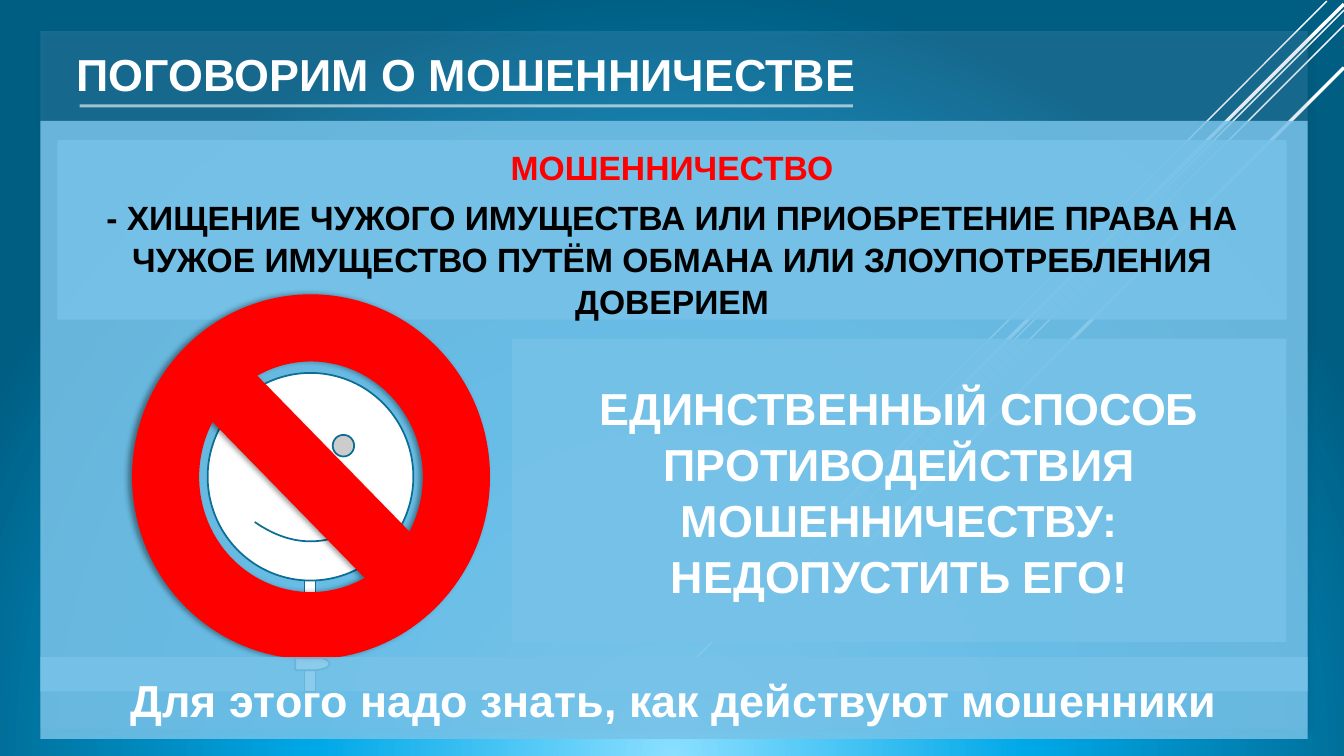
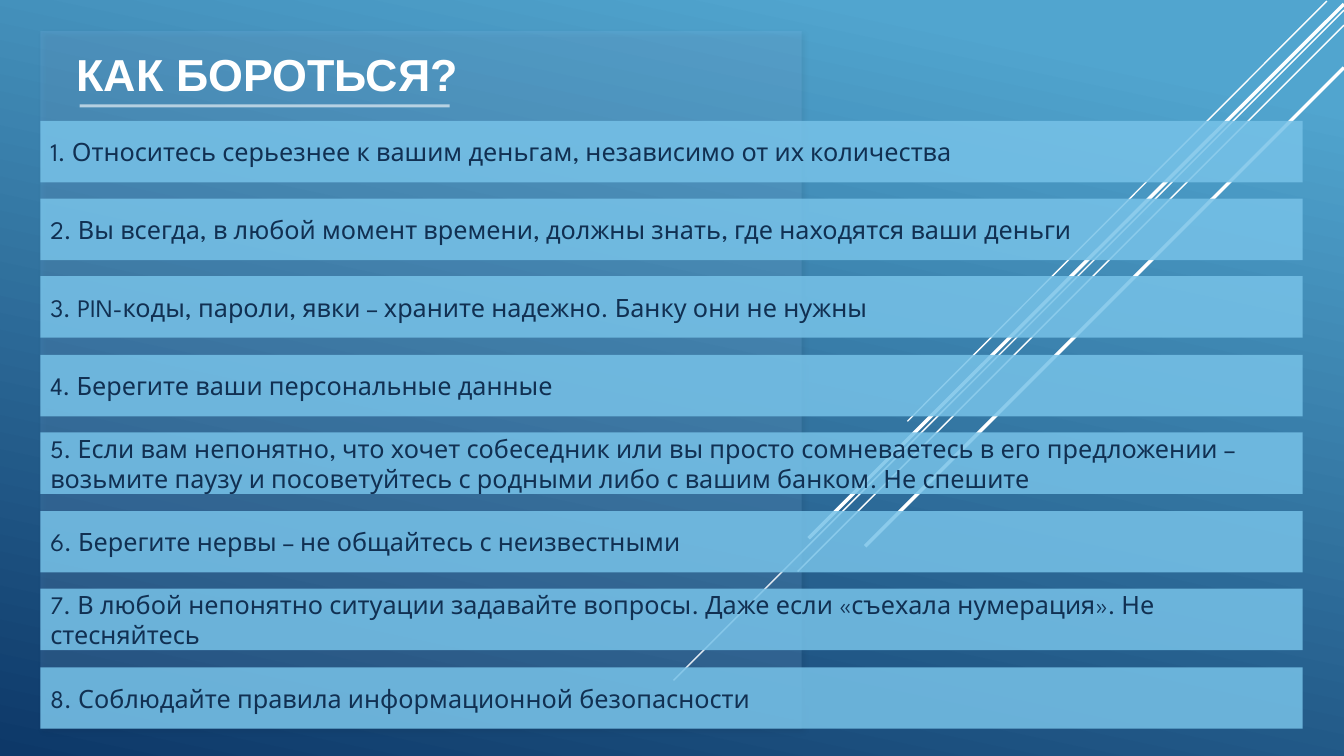
from lxml.etree import SubElement
from pptx import Presentation
from pptx.dml.color import RGBColor
from pptx.enum.shapes import MSO_CONNECTOR, MSO_SHAPE
from pptx.enum.text import MSO_ANCHOR, MSO_AUTO_SIZE, PP_ALIGN
from pptx.oxml.ns import qn
from pptx.util import Pt

PX = 9144  # 100 px to the inch
COLORS = {
    "white": "FFFFFF", "black": "000000", "red": "FF0000", "ink": "113052",
    "band": "77C2E8", "veil": "99CCFF", "edge": "0B6E92",
    "glow": "8ADFFF", "azure": "00A8E8", "deep": "005E82",
    "sky": "51A5CF", "navy": "0D3868",
}
HEAD = "Arial"
BODY = "League Spartan"
LEFT = 40
STREAKS = [
    ((1316, 1), (900, 418), 1),
    ((1333, 10), (668, 675), 1),
    ((1333, 25), (791, 567), 1),
    ((1333, 4), (802, 534), 2.5),
    ((1333, 67), (858, 542), 2.5),
]
TIPS = [
    "1. Относитесь серьезнее к вашим деньгам, независимо от их количества",
    "2. Вы всегда, в любой момент времени, должны знать, где находятся ваши деньги",
    "3. PIN-коды, пароли, явки – храните надежно. Банку они не нужны",
    "4. Берегите ваши персональные данные",
    "5. Если вам непонятно, что хочет собеседник или вы просто сомневаетесь в его "
    "предложении – возьмите паузу и посоветуйтесь с родными либо с вашим банком. "
    "Не спешите",
    "6. Берегите нервы – не общайтесь с неизвестными",
    "7. В любой непонятно ситуации задавайте вопросы. Даже если «съехала нумерация». "
    "Не стесняйтесь",
    "8. Соблюдайте правила информационной безопасности",
]


def rgb(name):
    return RGBColor.from_string(COLORS[name])


def node(base, tag, **attrs):
    """Append a child element, with its attributes as text."""
    return SubElement(base, qn(tag), {k: str(v) for k, v in attrs.items()})


def fade(fill, alpha):
    """Make a solid fill partly clear; alpha is the opacity in percent."""
    node(fill.fore_color._xFill.find(qn("a:srgbClr")), "a:alpha", val=alpha * 1000)


def place(shape, box):
    shape.left, shape.top, shape.width, shape.height = (n * PX for n in box)


def draw(shapes, kind, box, fill, alpha=100, edge=None):
    shape = shapes.add_shape(kind, *(n * PX for n in box))
    shape.shadow.inherit = False
    shape.fill.solid()
    shape.fill.fore_color.rgb = rgb(fill)
    if alpha < 100:
        fade(shape.fill, alpha)
    if edge:
        shape.line.color.rgb = rgb(edge)
        shape.line.width = Pt(1.25)
    else:
        shape.line.fill.background()
    return shape


def shade(shape, angle):
    """Add a soft outer shadow that falls at the angle in degrees."""
    glow = node(shape.element.spPr.find(qn("a:effectLst")), "a:outerShdw",
                blurRad=Pt(4), dist=Pt(3), dir=angle * 60000,
                algn="ctr", rotWithShape=0)
    tint = node(glow, "a:srgbClr", val=COLORS["black"])
    node(tint, "a:alpha", val=40000)


def rule(slide, start, end, width, alpha=100):
    line = slide.shapes.add_connector(
        MSO_CONNECTOR.STRAIGHT, *(n * PX for n in start + end))
    line.line.color.rgb = rgb("white")
    line.line.width = Pt(width)
    if alpha < 100:
        fade(line.line.fill, alpha)
    node(line.element.spPr, "a:effectLst")
    return line


def write(para, text, size, color, face=HEAD, bold=True):
    run = para.add_run()
    run.text = text
    font = run.font
    font.size, font.name, font.bold = Pt(size), face, bold
    font.color.rgb = rgb(color)


def band(slide, box, lines=(), size=32, anchor=MSO_ANCHOR.MIDDLE, after=0):
    """Draw a light band with centred lines of (text, colour)."""
    shape = draw(slide.shapes, MSO_SHAPE.RECTANGLE, box, "band", 85)
    frame = shape.text_frame
    frame.word_wrap = True
    frame.vertical_anchor = anchor
    for i, (text, color) in enumerate(lines):
        para = frame.add_paragraph() if i else frame.paragraphs[0]
        para.alignment = PP_ALIGN.CENTER
        para.line_spacing = 1.04
        para.space_after = Pt(after)
        write(para, text, size, color)


def tip(slide, top, text):
    shape = draw(slide.shapes, MSO_SHAPE.RECTANGLE, (LEFT, top, 1252, 61), "band", 85)
    frame = shape.text_frame
    frame.word_wrap = True
    frame.vertical_anchor = MSO_ANCHOR.MIDDLE
    para = frame.paragraphs[0]
    para.alignment = PP_ALIGN.LEFT
    para.space_before, para.space_after = Pt(4), Pt(6)
    write(para, text, 18, "ink", BODY, False)


def wash(slide, stops):
    """Fill the background with a gradient and return its element."""
    slide.background.fill.solid()
    base = slide.element.find(".//" + qn("p:bgPr"))
    base.remove(base.find(qn("a:solidFill")))
    grad = base.makeelement(qn("a:gradFill"), {"rotWithShape": "1"})
    base.insert(0, grad)
    items = node(grad, "a:gsLst")
    for pos, color in stops:
        stop = node(items, "a:gs", pos=pos * 1000)
        node(stop, "a:srgbClr", val=COLORS[color])
    return grad


def style(layout):
    """Set the title place and style that the slides share."""
    title = layout.placeholders[0]
    place(title, (66, 46, 1198, 59))
    frame = title.text_frame
    frame.vertical_anchor = MSO_ANCHOR.BOTTOM
    frame.auto_size = MSO_AUTO_SIZE.NONE


def streak(slide, layout):
    """Draw the slanted lines and move them to the layout."""
    tree = layout.element.cSld.spTree
    for start, end, width in STREAKS:
        tree.append(rule(slide, start, end, width).element)


def start(deck, layout, text, width, end):
    """Add a slide with its panel, title and underline."""
    slide = deck.slides.add_slide(layout)
    panel = draw(slide.shapes, MSO_SHAPE.RECTANGLE, (LEFT, 31, width, 692), "veil", 15)
    shade(panel, 45)
    title = slide.shapes.title
    panel.element.addnext(title.element)
    para = title.text_frame.paragraphs[0]
    para.alignment = PP_ALIGN.LEFT
    write(para, text, 32, "white")
    rule(slide, (79, 105), (end, 105), 2.25, 60)
    return slide


def figure(slide):
    group = slide.shapes.add_group_shape().shapes
    delay = MSO_SHAPE.FLOWCHART_DELAY
    parts = [
        (MSO_SHAPE.RECTANGLE, (302, 569, 11, 117)),
        (MSO_SHAPE.SMILEY_FACE, (206, 370, 204, 206)),
        (delay, (290, 638, 37, 13)),
        (delay, (288, 625, 43, 13)),
        (delay, (290, 612, 37, 13)),
        (delay, (293, 652, 34, 13)),
        (delay, (301, 606, 24, 13)),
    ]
    for kind, box in parts:
        thumb = draw(group, kind, box, "white", edge="edge")
    thumb.rotation = 141.2


def fraud(deck, layout):
    slide = start(deck, layout, "ПОГОВОРИМ О МОШЕННИЧЕСТВЕ", 1257, 846)
    grad = wash(slide, [(0, "glow"), (46, "azure"), (100, "deep")])
    focus = node(grad, "a:path", path="circle")
    node(focus, "a:fillToRect", l=50000, t=130000, r=50000, b=-30000)
    band(slide, (LEFT, 120, 1257, 566))
    band(slide, (57, 139, 1219, 178), [
        ("МОШЕННИЧЕСТВО", "red"),
        ("- ХИЩЕНИЕ ЧУЖОГО ИМУЩЕСТВА ИЛИ ПРИОБРЕТЕНИЕ ПРАВА НА ЧУЖОЕ ИМУЩЕСТВО "
         "ПУТЁМ ОБМАНА ИЛИ ЗЛОУПОТРЕБЛЕНИЯ ДОВЕРИЕМ", "black"),
    ], 24, MSO_ANCHOR.TOP, 6)
    figure(slide)
    band(slide, (508, 336, 768, 301), [
        ("ЕДИНСТВЕННЫЙ СПОСОБ ПРОТИВОДЕЙСТВИЯ МОШЕННИЧЕСТВУ:", "white"),
        ("НЕДОПУСТИТЬ ЕГО!", "white"),
    ])
    sign = draw(slide.shapes, MSO_SHAPE.NO_SYMBOL, (131, 292, 355, 362), "red")
    shade(sign, 180)
    band(slide, (LEFT, 652, 1257, 81),
         [("Для этого надо знать, как действуют мошенники", "white")])
    return slide


def advice(deck, layout):
    slide = start(deck, layout, "КАК БОРОТЬСЯ?", 755, 446)
    grad = wash(slide, [(10, "sky"), (100, "navy")])
    node(grad, "a:lin", ang=102 * 60000, scaled=0)
    first, last = 120, 662
    for i, text in enumerate(TIPS):
        tip(slide, first + (last - first) * i // (len(TIPS) - 1), text)


def main():
    deck = Presentation()
    deck.slide_width, deck.slide_height = 1333 * PX, 750 * PX
    layout = deck.slide_layouts[5]
    style(layout)
    streak(fraud(deck, layout), layout)
    advice(deck, layout)
    deck.save("out.pptx")


if __name__ == "__main__":
    main()
